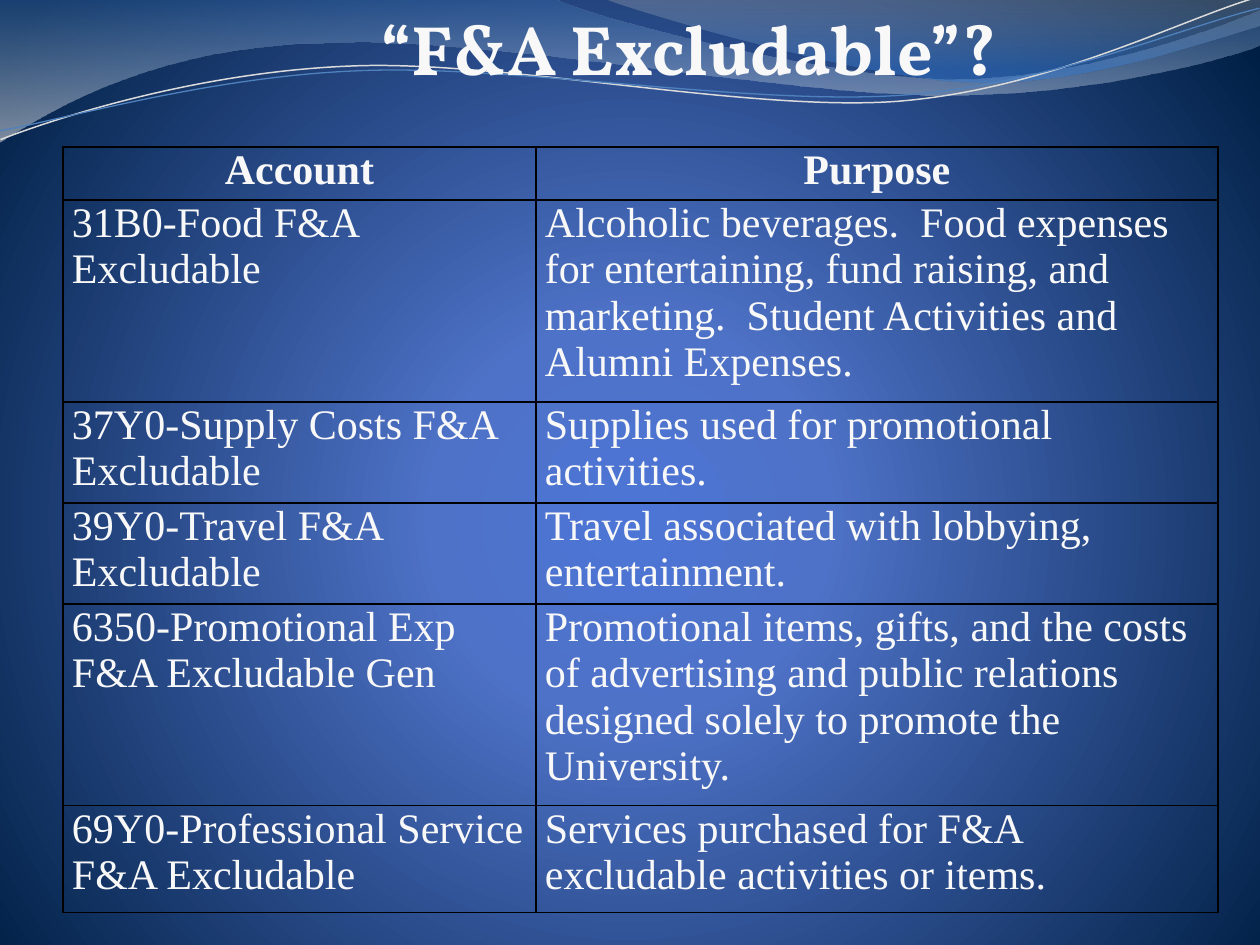
from lxml.etree import SubElement
from pptx import Presentation
from pptx.dml.color import RGBColor
from pptx.enum.text import PP_ALIGN
from pptx.oxml import parse_xml
from pptx.oxml.ns import nsdecls, qn
from pptx.util import Pt

PX = 914400 // 126
WHITE = "F8F8F8"
TITLE = "“F&A Excludable”?"
ROWS = [
    ("Account", "Purpose"),
    ("31B0-Food F&A Excludable",
     "Alcoholic beverages.  Food expenses for entertaining, fund raising, "
     "and marketing.  Student Activities and Alumni Expenses."),
    ("37Y0-Supply Costs F&A Excludable",
     "Supplies used for promotional activities."),
    ("39Y0-Travel F&A Excludable",
     "Travel associated with lobbying, entertainment."),
    ("6350-Promotional Exp F&A Excludable Gen",
     "Promotional items, gifts, and the costs of advertising and public "
     "relations designed solely to promote the University."),
    ("69Y0-Professional Service F&A Excludable",
     "Services purchased for F&A excludable activities or items."),
]
WIDTHS = [473, 682]
HEIGHTS = [53, 202, 101, 101, 202, 107]
GLOW = [(0, "4D75D6", 100), (25, "4E72C7", 100), (100, "001F44", 100)]
CIRCLE = ('<a:path path="circle"><a:fillToRect l="10000" t="110000" '
          'r="10000" b="100000"/></a:path>')
DOWN = '<a:lin ang="5400000" scaled="0"/>'
WAVES = [
    ([(0, 0), (554, -1), (600, 21, 837, 79, 955, 79),
      (1075, 79, 1207, 33, 1260, 11), (1261, 45),
      (1239, 55, 1096, 96, 940, 95), (784, 95, 481, 35, 324, 43),
      (163, 45, 58, 105, -1, 142), (0, 0)],
     [(0, "3567A6", 45), (100, "E1E1E1", 55)]),
    ([(604, -1), (641, 14, 859, 78, 969, 82),
      (1079, 87, 1211, 40, 1260, 26), (1260, 0), (604, -1)],
     [(0, "B7B7B7", 30), (80, "347AD2", 45)]),
]
TILT = 357.3
LINES = [
    ([(-2, 110), (58, 90, 199, 52, 350, 53), (499, 53, 745, 118, 896, 114),
      (1049, 109, 1184, 45, 1260, 27)], "DBDBDB", 0.85),
    ([(-2, 101), (57, 94, 207, 57, 357, 58), (509, 58, 750, 112, 902, 108),
      (1052, 104, 1188, 52, 1262, 38)], "4F81BD", 0.75),
]


def color(text):
    return RGBColor.from_string(text)


def shade(owner, stops, way):
    old = next(owner.iter(qn("a:solidFill")))
    marks = "".join(
        f'<a:gs pos="{pos * 1000}"><a:srgbClr val="{tint}">'
        f'<a:alpha val="{alpha * 1000}"/></a:srgbClr></a:gs>'
        for pos, tint, alpha in stops)
    new = parse_xml(f'<a:gradFill {nsdecls("a")} rotWithShape="1">'
                    f'<a:gsLst>{marks}</a:gsLst>{way}</a:gradFill>')
    old.getparent().replace(old, new)


def outline(shapes, steps, close):
    points = [step[i:i + 2] for step in steps for i in range(0, len(step), 2)]
    pen = shapes.build_freeform(*points[0], scale=PX)
    pen.add_line_segments(points[1:], close=close)
    shape = pen.convert_to_shape()
    shape.shadow.inherit = False
    parts = iter(list(shape.element.iter(qn("a:lnTo"))))
    for step in steps[1:]:
        part = next(parts)
        if len(step) == 6:
            part.addprevious(curve := parse_xml(
                f'<a:cubicBezTo {nsdecls("a")}/>'))
            for piece in (part, next(parts), next(parts)):
                curve.append(piece[0])
                piece.getparent().remove(piece)
    return shape


def write(frame, text, font, size, bold, center):
    frame.word_wrap = True
    para = frame.paragraphs[0]
    para.text = text
    para.alignment = PP_ALIGN.CENTER if center else PP_ALIGN.LEFT
    para.font.name = font
    para.font.size = Pt(size)
    para.font.bold = bold
    para.font.color.rgb = color(WHITE)


def border(cell):
    props = cell._tc.get_or_add_tcPr()
    for side in ("lnL", "lnR", "lnT", "lnB"):
        line = SubElement(props, qn(f"a:{side}"), w=str(Pt(1)))
        fill = SubElement(line, qn("a:solidFill"))
        SubElement(fill, qn("a:srgbClr"), val="000000")


def main():
    deck = Presentation()
    deck.slide_width, deck.slide_height = 1260 * PX, 945 * PX
    slide = deck.slides.add_slide(deck.slide_layouts[6])
    shapes = slide.shapes
    slide.background.fill.solid()
    slide.background.fill.fore_color.rgb = color(GLOW[0][1])
    shade(slide.element, GLOW, CIRCLE)

    for steps, stops in WAVES:
        wave = outline(shapes, steps, True)
        wave.line.fill.background()
        wave.fill.solid()
        wave.fill.fore_color.rgb = color(stops[0][1])
        shade(wave.element, stops, DOWN)
    group = shapes.add_group_shape()
    for steps, tint, width in LINES:
        curve = outline(group.shapes, steps, False)
        curve.rotation = TILT
        curve.fill.background()
        curve.line.color.rgb = color(tint)
        curve.line.width = Pt(width)

    title = shapes.add_textbox(294 * PX, 0, 798 * PX, 158 * PX).text_frame
    title.margin_left, title.margin_right = 0, 8 * PX
    title.margin_top = title.margin_bottom = 6 * PX
    write(title, TITLE, "Vollkorn", 40, True, True)

    table = shapes.add_table(len(ROWS), len(WIDTHS), 63 * PX, 147 * PX,
                             sum(WIDTHS) * PX, sum(HEIGHTS) * PX).table
    table.first_row = table.horz_banding = False
    for col, width in zip(table.columns, WIDTHS):
        col.width = width * PX
    for r, (texts, height) in enumerate(zip(ROWS, HEIGHTS)):
        table.rows[r].height = height * PX
        for c, text in enumerate(texts):
            cell = table.cell(r, c)
            cell.margin_left = cell.margin_right = 9 * PX
            cell.margin_top = cell.margin_bottom = 0
            border(cell)
            cell.fill.background()
            write(cell.text_frame, text, "Times New Roman", 24, r == 0, r == 0)
    deck.save("out.pptx")


if __name__ == "__main__":
    main()
